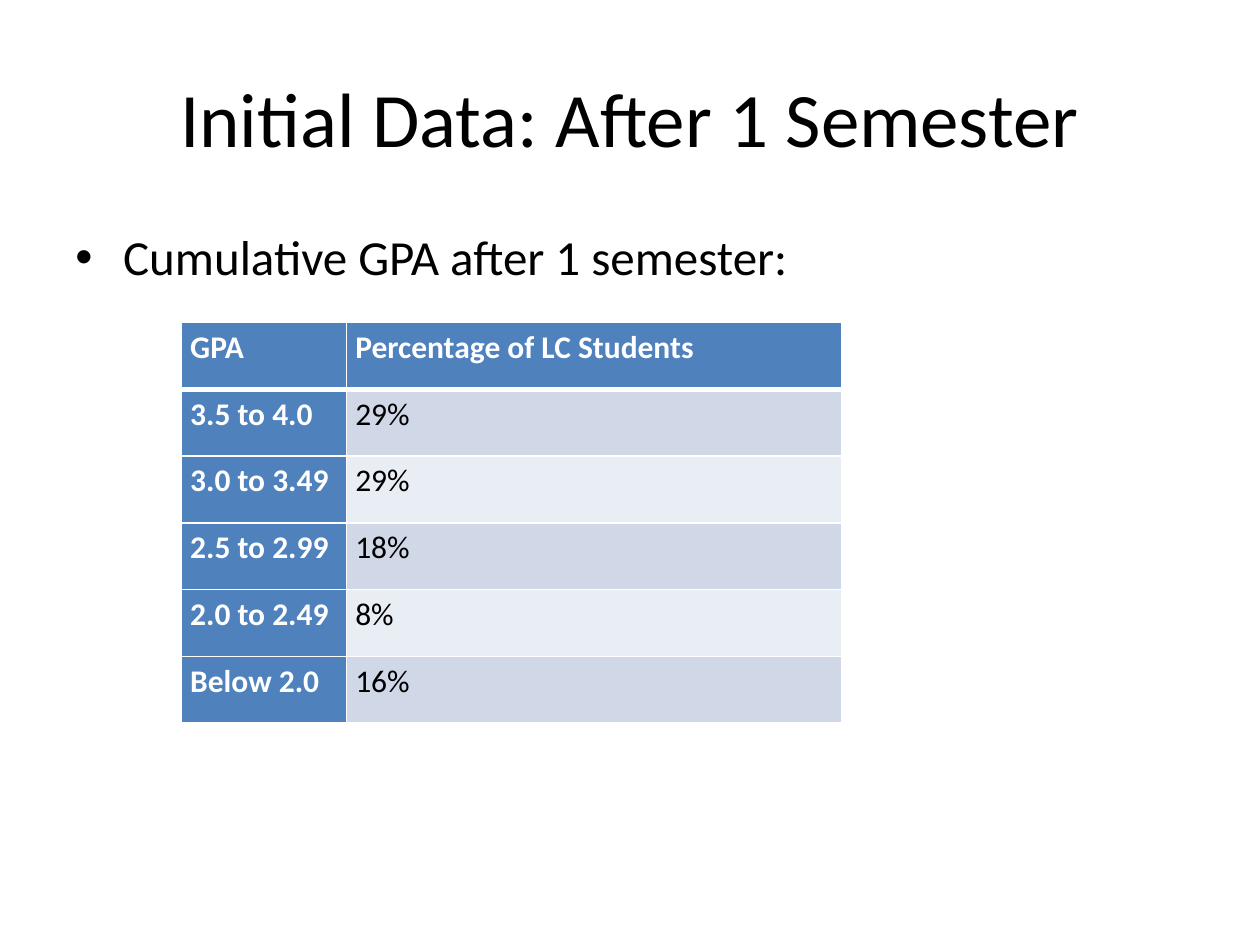
from dataclasses import dataclass

from lxml import etree
from pptx import Presentation
from pptx import util as u
from pptx.dml.color import RGBColor
from pptx.enum import text
from pptx.oxml.ns import qn


@dataclass(frozen=True)
class Theme:
    font: str = "Calibri"
    title: int = 44
    body: int = 28
    cell: int = 18
    black: str = "000000"
    white: str = "FFFFFF"
    blue: str = "4F81BD"
    bands: tuple = ("D0D8E8", "E9EDF4")


THEME = Theme()
ROWS = [
    ("GPA", "Percentage of LC Students"),
    ("3.5 to 4.0", "29%"),
    ("3.0 to 3.49", "29%"),
    ("2.5 to 2.99", "18%"),
    ("2.0 to 2.49", "8%"),
    ("Below 2.0", "16%"),
]


def add_run(p, words, size, color, bold=False):
    r = p.add_run()
    r.text = words
    r.font.name, r.font.size, r.font.bold = THEME.font, u.Pt(size), bold
    r.font.color.rgb = RGBColor.from_string(color)


def add_border(cell, side, points):
    """Draw one white edge; side is L, R, T or B."""
    ln = etree.SubElement(cell._tc.get_or_add_tcPr(), qn(f"a:ln{side}"), w=str(u.Pt(points)))
    fill = etree.SubElement(ln, qn("a:solidFill"))
    etree.SubElement(fill, qn("a:srgbClr"), val=THEME.white)


prs = Presentation()
prs.slide_width, prs.slide_height = u.Inches(10), u.Inches(7.5)
W, H = prs.slide_width, prs.slide_height
margin, content_w = int(W * 0.05), int(W * 0.9)
s = prs.slides.add_slide(prs.slide_layouts[5])

# Title
title = s.shapes.title
title.left, title.top, title.width, title.height = margin, int(H * 0.04), content_w, u.Inches(1.25)
tf = title.text_frame
tf.vertical_anchor = text.MSO_ANCHOR.MIDDLE
p = tf.paragraphs[0]
p.alignment = text.PP_ALIGN.CENTER
add_run(p, "Initial Data: After 1 Semester", THEME.title, THEME.black)

# Bullet
body = s.shapes.add_textbox(margin, u.Inches(1.75), content_w, int(H * 0.66))
tf = body.text_frame
tf.word_wrap = True
p = tf.paragraphs[0]
pPr = p._p.get_or_add_pPr()
indent = u.Inches(0.38)
pPr.set("marL", str(indent))
pPr.set("indent", str(-indent))
etree.SubElement(pPr, qn("a:buFont"), typeface="Arial")
etree.SubElement(pPr, qn("a:buChar"), char="•")
add_run(p, "Cumulative GPA after 1 semester:", THEME.body, THEME.black)

# GPA table: the second column is three times as wide as the first
col, row = u.Inches(1.31), u.Inches(0.53)
table = s.shapes.add_table(
    len(ROWS), 2, u.Inches(1.44), u.Inches(2.56), col * 4, row * len(ROWS)
).table
table.columns[0].width, table.columns[1].width = col, col * 3
table.first_col = True

for i, values in enumerate(ROWS):
    table.rows[i].height = row
    for j, value in enumerate(values):
        cell = table.cell(i, j)
        heading = i == 0 or j == 0
        cell.margin_left = cell.margin_right = u.Inches(0.07)
        cell.margin_top = cell.margin_bottom = 0
        edges = {"L": 1, "R": 1, "T": 3 if i == 1 else 1, "B": 3 if i == 0 else 1}
        for side, points in edges.items():
            add_border(cell, side, points)
        cell.fill.solid()
        cell.fill.fore_color.rgb = RGBColor.from_string(
            THEME.blue if heading else THEME.bands[(i - 1) % 2]
        )
        p = cell.text_frame.paragraphs[0]
        p.line_spacing = 1.15
        add_run(p, value, THEME.cell, THEME.white if heading else THEME.black, heading)

prs.save("out.pptx")
